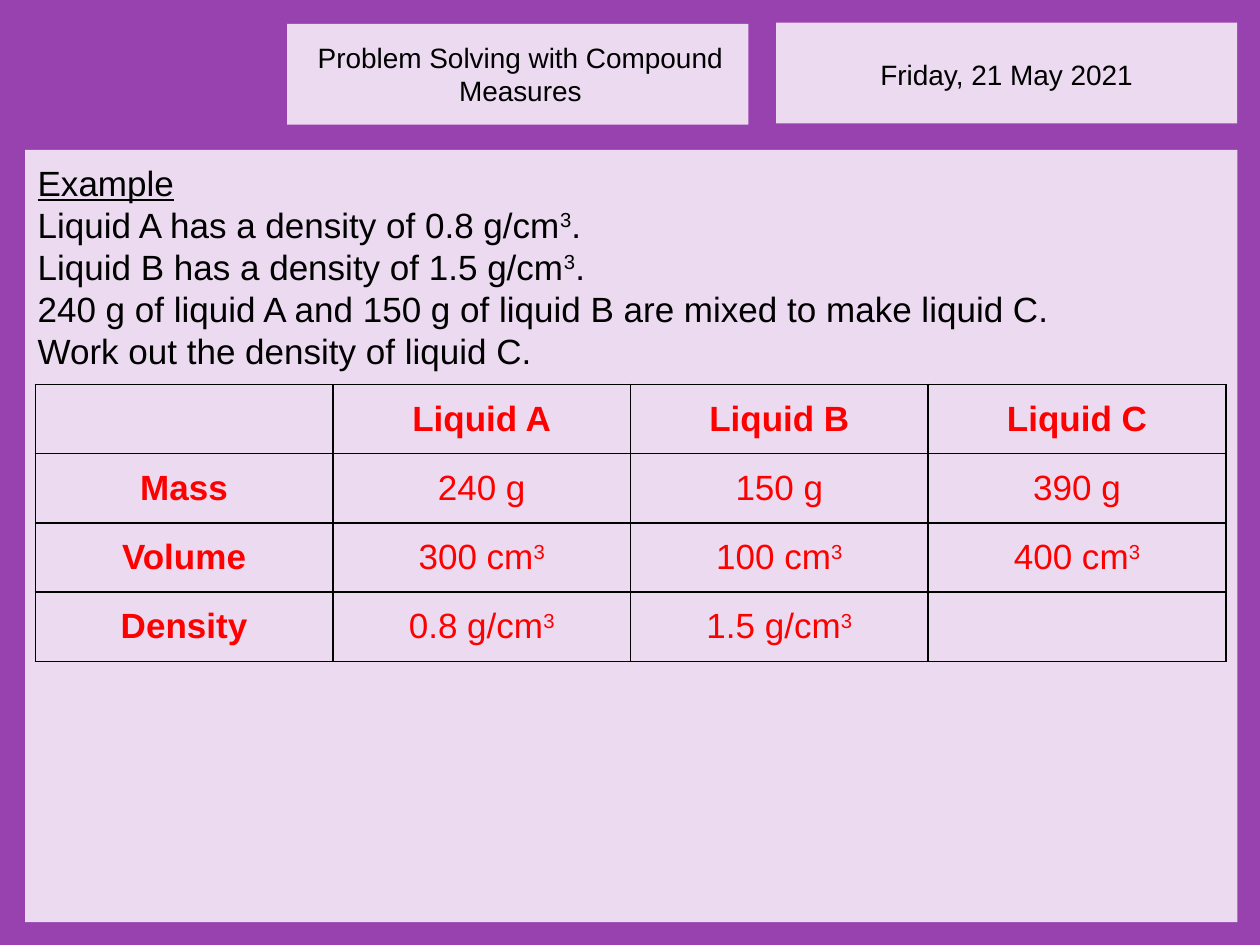
from dataclasses import dataclass

from lxml import etree
from pptx import Presentation
from pptx.dml.color import RGBColor
from pptx.enum.shapes import MSO_SHAPE
from pptx.enum.text import MSO_ANCHOR, PP_ALIGN
from pptx.oxml.ns import qn
from pptx.util import Inches, Pt

RECTANGLE = MSO_SHAPE.RECTANGLE
LEFT, CENTER = PP_ALIGN.LEFT, PP_ALIGN.CENTER
MIDDLE = MSO_ANCHOR.MIDDLE
SLIDE_WIDTH, SLIDE_HEIGHT = Inches(10), Inches(7.5)


@dataclass(frozen=True)
class Theme:
    """Colours, font and type sizes of the lesson."""
    frame: str = "9842B0"
    panel: str = "ECDAF1"
    ink: str = "000000"
    answer: str = "FF0000"
    font: str = "Arial"
    header_size: int = 16
    body_size: int = 20
    border_width: int = 1


THEME = Theme()

QUESTION = [
    "Liquid A has a density of 0.8 g/cm^3.",
    "Liquid B has a density of 1.5 g/cm^3.",
    "240 g of liquid A and 150 g of liquid B are mixed to make liquid C.",
    "Work out the density of liquid C.",
]
MEASURES = [
    ["", "Liquid A", "Liquid B", "Liquid C"],
    ["Mass", "240 g", "150 g", "390 g"],
    ["Volume", "300 cm^3", "100 cm^3", "400 cm^3"],
    ["Density", "0.8 g/cm^3", "1.5 g/cm^3", ""],
]


def area(left, top, width, height):
    """Turn percentages of the slide into lengths."""
    return (int(SLIDE_WIDTH * left / 100), int(SLIDE_HEIGHT * top / 100),
            int(SLIDE_WIDTH * width / 100), int(SLIDE_HEIGHT * height / 100))


def write(paragraph, text, size=THEME.body_size, color=THEME.ink,
          bold=False, underline=False, align=LEFT):
    """Write text in a paragraph, raising the character after a caret."""
    paragraph.alignment = align
    base, _, rest = text.partition("^")
    for part, raised in ((base, False), (rest[:1], True), (rest[1:], False)):
        if not part:
            continue
        run = paragraph.add_run()
        run.text = part
        run.font.name = THEME.font
        run.font.size = Pt(size)
        run.font.bold = bold
        run.font.underline = underline
        run.font.color.rgb = RGBColor.from_string(color)
        if raised:
            run.font._element.set("baseline", "30000")


def add_panel(slide, place, color=THEME.panel):
    """Add a plain filled rectangle."""
    panel = slide.shapes.add_shape(RECTANGLE, *area(*place))
    panel.shadow.inherit = False
    panel.fill.solid()
    panel.fill.fore_color.rgb = RGBColor.from_string(color)
    panel.line.fill.background()


def add_text(slide, place, lines):
    """Add a wrapped text box of (text, format) lines."""
    frame = slide.shapes.add_textbox(*area(*place)).text_frame
    frame.word_wrap = True
    for index, (text, style) in enumerate(lines):
        paragraph = frame.add_paragraph() if index else frame.paragraphs[0]
        write(paragraph, text, **style)


def outline(cell):
    """Draw the four borders of a cell."""
    properties = cell._tc.get_or_add_tcPr()
    for side in ("a:lnL", "a:lnR", "a:lnT", "a:lnB"):
        border = etree.SubElement(properties, qn(side), w=str(Pt(THEME.border_width)))
        fill = etree.SubElement(border, qn("a:solidFill"))
        etree.SubElement(fill, qn("a:srgbClr"), val=THEME.ink)


def add_measures(slide, place, rows):
    """Add the table with bold headings on its top and left."""
    table = slide.shapes.add_table(len(rows), len(rows[0]), *area(*place)).table
    table.first_row = table.horz_banding = False
    for row, texts in enumerate(rows):
        for column, text in enumerate(texts):
            cell = table.cell(row, column)
            outline(cell)
            cell.fill.background()
            cell.vertical_anchor = MIDDLE
            write(cell.text_frame.paragraphs[0], text, color=THEME.answer,
                  bold=row == 0 or column == 0, align=CENTER)


def main():
    """Build the worked example and save it."""
    deck = Presentation()
    deck.slide_width, deck.slide_height = SLIDE_WIDTH, SLIDE_HEIGHT
    slide = deck.slides.add_slide(deck.slide_layouts[6])
    header = {"size": THEME.header_size, "align": CENTER}

    add_panel(slide, (0, 0, 100, 100), THEME.frame)
    add_panel(slide, (61.6, 2.4, 36.6, 10.67))
    add_text(slide, (61.6, 5.47, 36.6, 4.93), [("Friday, 21 May 2021", header)])
    add_panel(slide, (22.8, 2.53, 36.6, 10.67))
    add_text(slide, (23, 3.6, 36.6, 8.53),
             [("Problem Solving with Compound Measures", header)])

    add_panel(slide, (2, 15.87, 96.2, 81.73))
    add_text(slide, (2, 16.4, 96.1, 23.73),
             [("Example", {"underline": True})] + [(line, {}) for line in QUESTION])
    add_measures(slide, (2.8, 40.67, 94.5, 29.33), MEASURES)
    deck.save("out.pptx")


if __name__ == "__main__":
    main()
